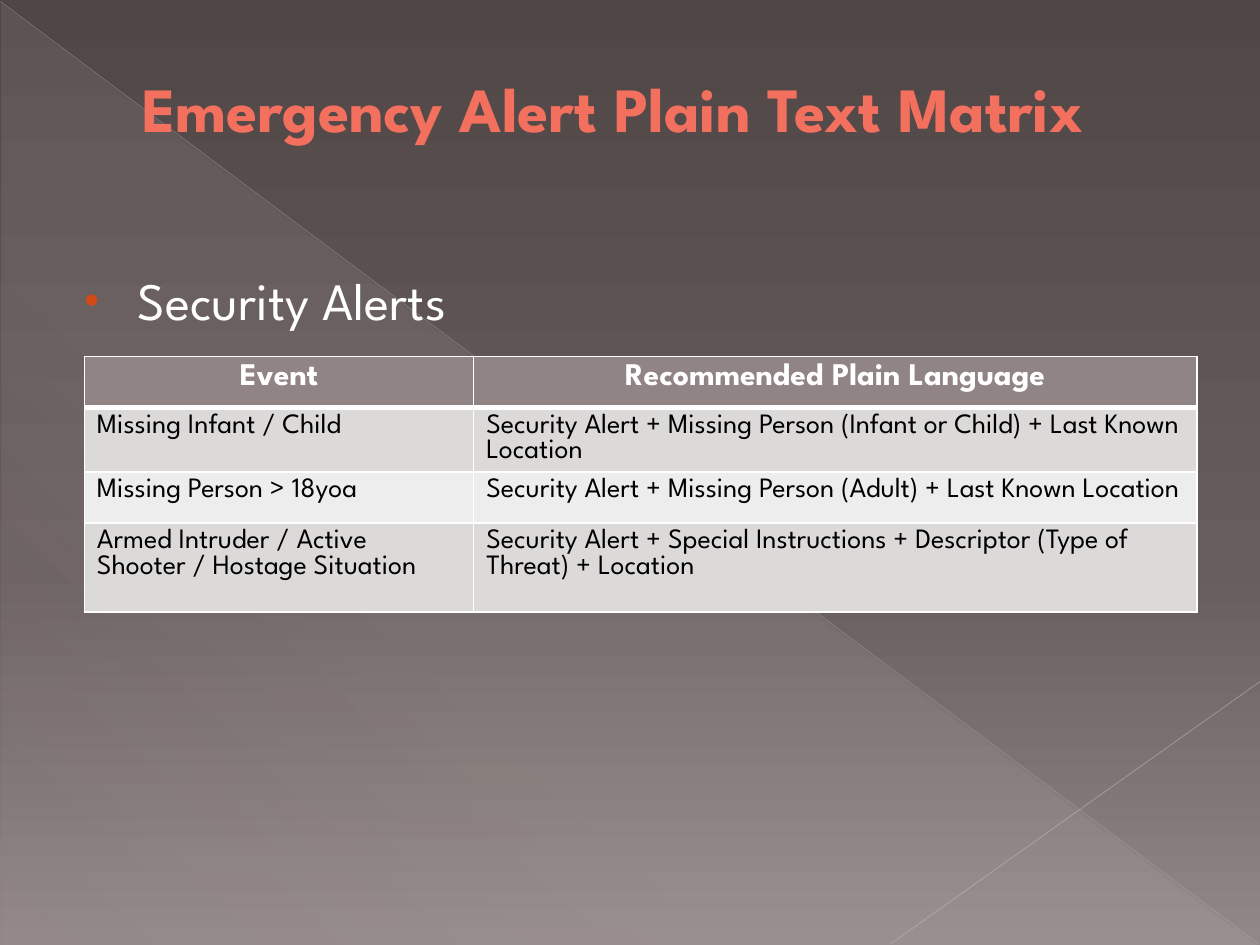
from lxml.etree import SubElement
from pptx import Presentation
from pptx.dml.color import RGBColor
from pptx.enum.shapes import MSO_CONNECTOR, MSO_SHAPE
from pptx.enum.text import MSO_ANCHOR, MSO_AUTO_SIZE, PP_ALIGN
from pptx.oxml.ns import qn
from pptx.util import Pt

# Content
TITLE = "Emergency Alert Plain Text Matrix"
BULLET = "Security Alerts"
ROWS = [
    ("Event", "Recommended Plain Language"),
    ("Missing Infant / Child",
     "Security Alert + Missing Person (Infant or Child) + Last Known Location"),
    ("Missing Person > 18yoa",
     "Security Alert + Missing Person (Adult) + Last Known Location"),
    ("Armed Intruder / Active Shooter / Hostage Situation",
     "Security Alert + Special Instructions + Descriptor (Type of Threat) + Location"),
]

THEME = {
    "font": "League Spartan",
    "title": "F4705E", "title_outline": "923210",
    "light": "FFFFFF", "dark": "000000", "bullet": "D34817",
    "header": "918485", "bands": ("DCD9D9", "EEEDED"),
    "title_size": 36, "body_size": 30, "header_size": 18, "cell_size": 16,
    # Gradient stops: position, colour, opacity (all in percent)
    "background": [(0, "4F4646", 100), (60, "685D5D", 100), (100, "928787", 100)],
    "triangle": [(0, "E9E5DC", 10), (70, "E9E5DC", 8), (100, "E9E5DC", 1)],
}

# Geometry in points
WIDTH, HEIGHT = 720, 540
TITLE_BOX = (36, 24, 648, 75)
BODY_BOX = (36, 149.8, 648, 358.5)
TABLE_LEFT, TABLE_TOP = 48.2, 203.8
COLUMN_WIDTHS = (222.5, 413.3)
ROW_HEIGHTS = (29, 37, 29, 51)
# Begin x, begin y, end x, end y, colour, width, opacity
DIAGONALS = [
    (0, 0.7, 719.3, 539.3, "C1BEBE", 0.39, 35),
    (720, 389.5, 509, 539.3, "C7C5C5", 0.47, 45),
]


def points(values):
    return [Pt(value) for value in values]


def add_color(parent, color, opacity=100):
    element = SubElement(parent, qn("a:srgbClr"), val=color)
    if opacity < 100:
        SubElement(element, qn("a:alpha"), val=str(opacity * 1000))


def set_gradient(fill, properties, stops, angle):
    fill.gradient()
    gradient = properties.find(qn("a:gradFill"))
    for child in list(gradient):
        gradient.remove(child)
    stop_list = SubElement(gradient, qn("a:gsLst"))
    for position, color, opacity in stops:
        stop = SubElement(stop_list, qn("a:gs"), pos=str(position * 1000))
        add_color(stop, color, opacity)
    SubElement(gradient, qn("a:lin"), ang=str(angle * 60000), scaled="0")


def add_run(paragraph, text, size, color, bold=False):
    run = paragraph.add_run()
    run.text = text
    run.font.name = THEME["font"]
    run.font.size = Pt(size)
    run.font.bold = bold
    run.font.color.rgb = RGBColor.from_string(color)
    return run


def place(placeholder, box, anchor):
    placeholder.left, placeholder.top, placeholder.width, placeholder.height = points(box)
    frame = placeholder.text_frame
    frame.word_wrap = True
    frame.auto_size = MSO_AUTO_SIZE.NONE
    frame.vertical_anchor = anchor
    return frame.paragraphs[0]


def set_indent(paragraph, left, first):
    properties = paragraph._p.get_or_add_pPr()
    properties.set("marL", str(Pt(left)))
    properties.set("indent", str(Pt(first)))
    return properties


def set_borders(cell, widths):
    properties = cell._tc.get_or_add_tcPr()
    for index, (side, width) in enumerate(widths.items()):
        line = properties.makeelement(qn(f"a:{side}"), {"w": str(Pt(width))})
        add_color(SubElement(line, qn("a:solidFill")), THEME["light"])
        properties.insert(index, line)


presentation = Presentation()
presentation.slide_width, presentation.slide_height = Pt(WIDTH), Pt(HEIGHT)
slide = presentation.slides.add_slide(presentation.slide_layouts[1])
shapes = slide.shapes
title, body = shapes.title, slide.placeholders[1]

# Background
background_fill = slide.background.fill
background_fill.solid()
background_properties = slide._element.find(".//" + qn("p:bgPr"))
set_gradient(background_fill, background_properties, THEME["background"], 90)

# Translucent triangle and diagonal lines
triangle = shapes.add_shape(MSO_SHAPE.RIGHT_TRIANGLE, *points((0.7, 1.4, 718.6, 538.6)))
triangle.shadow.inherit = False
triangle.line.fill.background()
set_gradient(triangle.fill, triangle._element.spPr, THEME["triangle"], 133)

for *ends, color, width, opacity in DIAGONALS:
    diagonal = shapes.add_connector(MSO_CONNECTOR.STRAIGHT, *points(ends))
    diagonal.line.width = Pt(width)
    diagonal.line.color.rgb = RGBColor.from_string(color)
    line_color = diagonal._element.spPr.find(".//" + qn("a:srgbClr"))
    SubElement(line_color, qn("a:alpha"), val=str(opacity * 1000))
    SubElement(diagonal._element.spPr, qn("a:effectLst"))

# Bring the placeholders in front of the decoration
for placeholder in (title, body):
    shapes._spTree.append(placeholder._element)

# Title
paragraph = place(title, TITLE_BOX, MSO_ANCHOR.MIDDLE)
paragraph.alignment = PP_ALIGN.LEFT
set_indent(paragraph, 38, 0)
run = add_run(paragraph, TITLE, THEME["title_size"], THEME["title"], True)
outline = run._r.rPr.makeelement(qn("a:ln"), {"w": str(Pt(0.5))})
add_color(SubElement(outline, qn("a:solidFill")), THEME["title_outline"])
run._r.rPr.insert(0, outline)

# Bulleted heading
paragraph = place(body, BODY_BOX, MSO_ANCHOR.TOP)
properties = set_indent(paragraph, 35.5, -30.5)
spacing = SubElement(properties, qn("a:spcBef"))
SubElement(spacing, qn("a:spcPct"), val="20000")
add_color(SubElement(properties, qn("a:buClr")), THEME["bullet"])
SubElement(properties, qn("a:buSzPct"), val="80000")
SubElement(properties, qn("a:buFont"), typeface="Arial")
SubElement(properties, qn("a:buChar"), char="•")
add_run(paragraph, BULLET, THEME["body_size"], THEME["light"])

# Alert table
table = shapes.add_table(
    len(ROWS), len(COLUMN_WIDTHS),
    *points((TABLE_LEFT, TABLE_TOP, sum(COLUMN_WIDTHS), sum(ROW_HEIGHTS))),
).table
for column, width in zip(table.columns, COLUMN_WIDTHS):
    column.width = Pt(width)
for row_index, (row, height, texts) in enumerate(zip(table.rows, ROW_HEIGHTS, ROWS)):
    row.height = Pt(height)
    header = row_index == 0
    for cell, text in zip(row.cells, texts):
        paragraph = cell.text_frame.paragraphs[0]
        paragraph.alignment = PP_ALIGN.CENTER if header else PP_ALIGN.LEFT
        add_run(paragraph, text,
                THEME["header_size" if header else "cell_size"],
                THEME["light" if header else "dark"], header)
        cell.fill.solid()
        cell.fill.fore_color.rgb = RGBColor.from_string(
            THEME["header"] if header else THEME["bands"][(row_index - 1) % 2])
        set_borders(cell, {"lnL": 1, "lnR": 1,
                           "lnT": 3 if row_index == 1 else 1,
                           "lnB": 3 if header else 1})

presentation.save("out.pptx")
